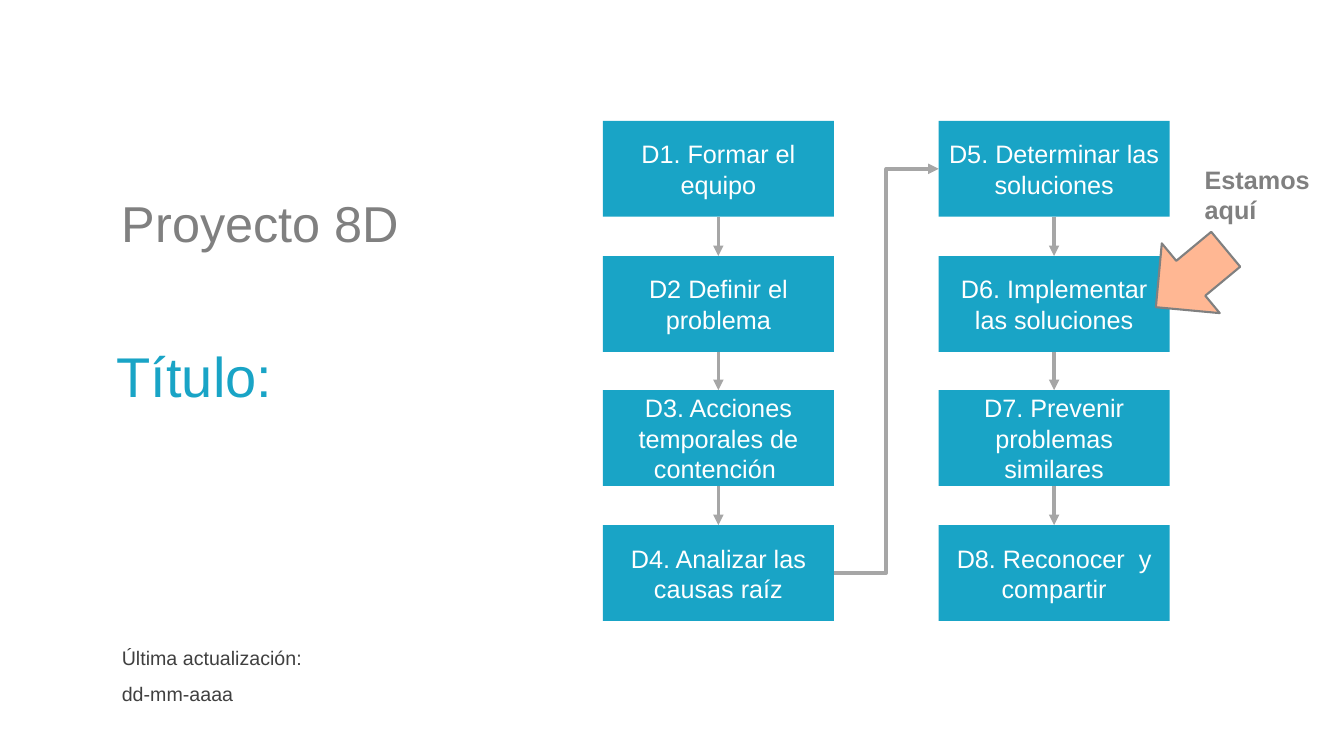
"""Build the 8D project cover slide with its eight-step flow."""
from pptx import Presentation
from pptx.dml.color import RGBColor as RGB
from pptx.enum.shapes import MSO_CONNECTOR as LINK, MSO_SHAPE as SHAPE
from pptx.enum.text import MSO_ANCHOR as ANCHOR, PP_ALIGN as ALIGN
from pptx.oxml.ns import qn
from pptx.util import Pt
from lxml.etree import SubElement as Sub

PX = 9144
HUES = {"teal": "19A4C6", "gray": "808080", "dark": "404040",
        "line": "A6A6A6", "peach": "FFB793", "white": "FFFFFF"}
COLOR = {name: RGB.from_string(hue) for name, hue in HUES.items()}


def write(shape, lines, size, color, bold=False, **form):
    frame = shape.text_frame
    frame.word_wrap = True
    frame.text = "\n".join(lines)
    for para in frame.paragraphs:
        for key, value in form.items():
            setattr(para, key, value)
        font = para.runs[0].font
        for key, value in {"name": "Arial", "size": Pt(size), "bold": bold}.items():
            setattr(font, key, value)
        font.color.rgb = COLOR[color]


def join(kind, start, exit, end, entry):
    link = shapes.add_connector(kind, 0, 0, 0, 0)
    link.begin_connect(start, exit)
    link.end_connect(end, entry)
    link.line.color.rgb = COLOR["line"]
    link.line.width = Pt(2.5)
    Sub(link.line._get_or_add_ln(), qn("a:tailEnd"), type="triangle")
    Sub(link._element.spPr, qn("a:effectLst"))


deck = Presentation()
deck.slide_width, deck.slide_height = 1333 * PX, 750 * PX
shapes = deck.slides.add_slide(deck.slide_layouts[6]).shapes

spaced = {"line_spacing": 1.2, "space_after": Pt(6)}
texts = [
    ((111, 186, 324, 107), ["Proyecto 8D"], 36, "gray", False, {}),
    ((111, 631, 315, 82), ["Última actualización:", "dd-mm-aaaa"], 14, "dark", False, spaced),
    ((106, 334, 494, 177), ["Título:"], 40, "teal", False, {}),
    ((1185, 158, 127, 107), ["Estamos aquí"], 18, "gray", True, {}),
]
for place, lines, size, color, bold, form in texts:
    box = shapes.add_textbox(*[n * PX for n in place])
    write(box, lines, size, color, bold, **form)

steps = ["D1. Formar el equipo", "D2 Definir el problema",
         "D3. Acciones temporales de contención ", "D4. Analizar las causas raíz",
         "D5. Determinar las soluciones", "D6. Implementar las soluciones",
         "D7. Prevenir problemas similares", "D8. Reconocer  y compartir"]
boxes = []
for i, step in enumerate(steps):
    col, row = divmod(i, 4)
    left, top = 598 + 333 * col, 120 + round(401 * row / 3)
    box = shapes.add_shape(SHAPE.RECTANGLE, left * PX, top * PX, 229 * PX, 95 * PX)
    box.shadow.inherit = False
    box.fill.solid()
    box.fill.fore_color.rgb = COLOR["teal"]
    box.line.fill.background()
    frame = box.text_frame
    for key, value in {"margin_left": 8 * PX, "margin_right": 8 * PX, "margin_top": 0,
                       "margin_bottom": 0, "vertical_anchor": ANCHOR.MIDDLE}.items():
        setattr(frame, key, value)
    write(box, [step], 18, "white", alignment=ALIGN.CENTER)
    boxes.append(box)

for i in (0, 1, 2, 4, 5, 6):
    join(LINK.STRAIGHT, boxes[i], 2, boxes[i + 1], 0)
join(LINK.ELBOW, boxes[3], 3, boxes[4], 1)

here = shapes.add_shape(SHAPE.RIGHT_ARROW, 1136 * PX, 231 * PX, 90 * PX, 90 * PX)
here.shadow.inherit = False
here.rotation = 140.3
here.fill.solid()
here.fill.fore_color.rgb = COLOR["peach"]
here.line.color.rgb = COLOR["gray"]
here.line.width = Pt(1.5)

deck.save("out.pptx")
